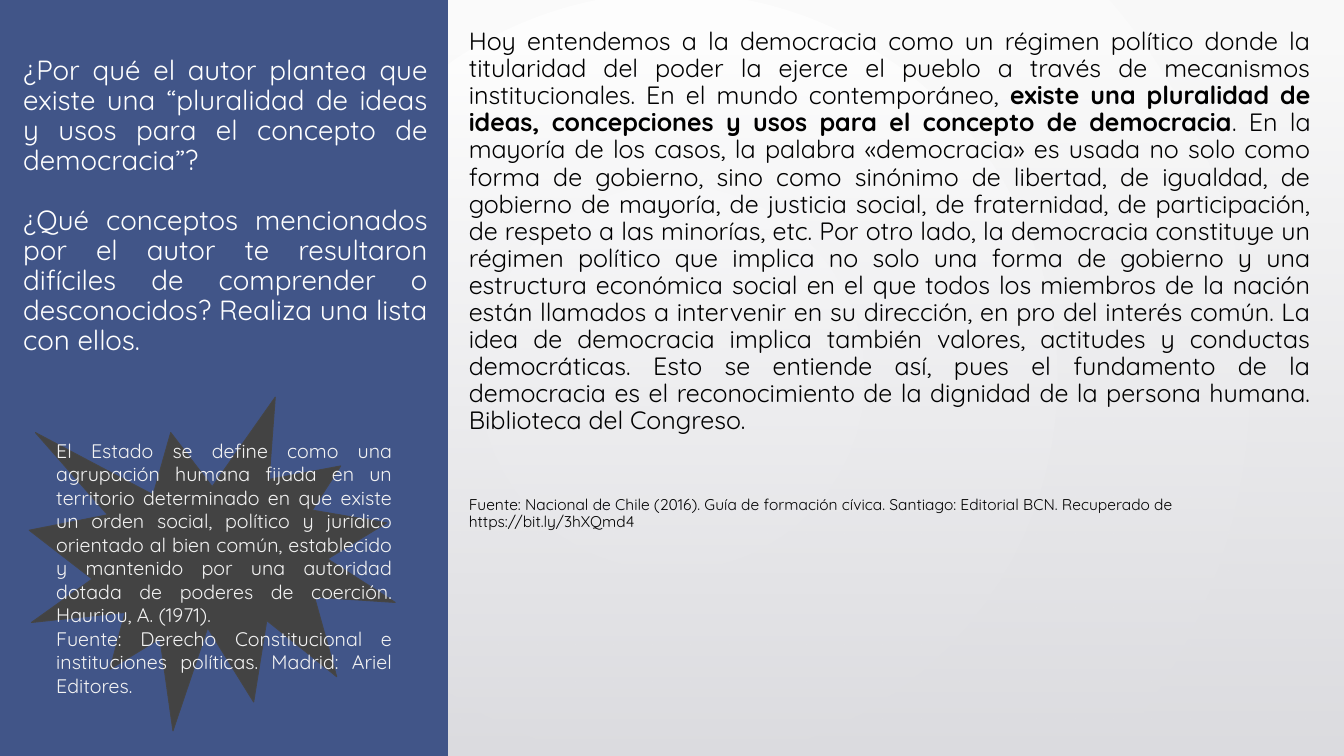
from pptx import Presentation
from pptx.dml.color import RGBColor
from pptx.enum.shapes import MSO_SHAPE
from pptx.enum.text import MSO_ANCHOR, MSO_AUTO_SIZE, PP_ALIGN
from pptx.oxml import parse_xml
from pptx.oxml.ns import nsdecls, qn
from pptx.util import Inches, Pt

RECT, SEAL = MSO_SHAPE.RECTANGLE, MSO_SHAPE.EXPLOSION1
LEFT, JUST = PP_ALIGN.LEFT, PP_ALIGN.JUSTIFY
TOP = MSO_ANCHOR.TOP
FIXED, GROW = MSO_AUTO_SIZE.NONE, MSO_AUTO_SIZE.SHAPE_TO_FIT_TEXT

FONT = "Quicksand"
BLUE = RGBColor(0x41, 0x55, 0x88)
GRAY = RGBColor(0x43, 0x43, 0x43)
EDGE = RGBColor(0x45, 0x45, 0x45)
WHITE = RGBColor(0xFF, 0xFF, 0xFF)
PALE = RGBColor(0xF3, 0xF3, 0xF3)
BLACK = RGBColor(0, 0, 0)
GLOW = (RGBColor(0xFF, 0xFF, 0xFF), RGBColor(0xF8, 0xF8, 0xF8))
FADE = (RGBColor(0xDC, 0xDC, 0xE0), RGBColor(0xDD, 0xDD, 0xE1))

# Each paragraph: size, alignment, space before, runs of (text, bold)
ASK = [
    (19.8, JUST, 0, [("¿Por qué el autor plantea que existe una “pluralidad de "
                      "ideas y usos para el concepto de democracia”?", False)]),
    (19.8, JUST, 21.4, [("¿Qué conceptos mencionados por el autor te resultaron "
                         "difíciles de comprender o desconocidos? Realiza una "
                         "lista con ellos.", False)]),
]
READ = [
    (17.9, JUST, 0, [
        ("Hoy entendemos a la democracia como un régimen político donde la "
         "titularidad del poder la ejerce el pueblo a través de mecanismos "
         "institucionales. En el mundo contemporáneo, ", False),
        ("existe una pluralidad de ideas, concepciones y usos para el concepto "
         "de democracia", True),
        (". En la mayoría de los casos, la palabra «democracia» es usada no solo "
         "como forma de gobierno, sino como sinónimo de libertad, de igualdad, "
         "de gobierno de mayoría, de justicia social, de fraternidad, de "
         "participación, de respeto a las minorías, etc. Por otro lado, la "
         "democracia constituye un régimen político que implica no solo una "
         "forma de gobierno y una estructura económica social en el que todos "
         "los miembros de la nación están llamados a intervenir en su dirección, "
         "en pro del interés común. La idea de democracia implica también "
         "valores, actitudes y conductas democráticas. Esto se entiende así, "
         "pues el fundamento de la democracia es el reconocimiento de la "
         "dignidad de la persona humana. Biblioteca del Congreso.", False)]),
    (11.1, LEFT, 44.5, [("Fuente: Nacional de Chile (2016). Guía de formación "
                         "cívica. Santiago: Editorial BCN. Recuperado de "
                         "https://bit.ly/3hXQmd4", False)]),
]
STATE = [
    (14, JUST, 0, [("El Estado se define como una agrupación humana fijada en un "
                    "territorio determinado en que existe un orden social, "
                    "político y jurídico orientado al bien común, establecido y "
                    "mantenido por una autoridad dotada de poderes de coerción. "
                    "Hauriou, A. (1971).", False)]),
    (14, JUST, 0, [("Fuente: Derecho Constitucional e instituciones políticas. "
                    "Madrid: Ariel Editores.", False)]),
]

WIDE, HIGH = 13.33, 7.5
SIDE = WIDE / 3
HEAD = 0.51


def box(*sides):
    return [Inches(side) for side in sides]


def blend(fill, root, pair, way, clear=False):
    """Give a fill two colour stops; clear makes the first one transparent."""
    fill.gradient()
    old = root.find(".//" + qn("a:gradFill"))
    alpha = '<a:alpha val="0"/>' if clear else ""
    new = parse_xml(
        f'<a:gradFill {nsdecls("a")} rotWithShape="1"><a:gsLst>'
        f'<a:gs pos="0"><a:srgbClr val="{pair[0]}">{alpha}</a:srgbClr></a:gs>'
        f'<a:gs pos="100000"><a:srgbClr val="{pair[1]}"/></a:gs>'
        f'</a:gsLst>{way}</a:gradFill>')
    old.getparent().replace(old, new)


def add_form(slide, kind, *place):
    form = slide.shapes.add_shape(kind, *box(*place))
    form.shadow.inherit = False
    form.line.fill.background()
    return form


def write(shape, paras, color, lead, fit, pad):
    frame = shape.text_frame
    frame.word_wrap = True
    frame.auto_size = fit
    frame.vertical_anchor = TOP
    frame.margin_left = frame.margin_right = Inches(0.1)
    frame.margin_top = frame.margin_bottom = Inches(pad)
    for i, (size, align, gap, runs) in enumerate(paras):
        para = frame.add_paragraph() if i else frame.paragraphs[0]
        props = para._p.get_or_add_pPr()
        props.set("marL", "0")
        props.set("indent", "0")
        props.append(parse_xml(f'<a:buNone {nsdecls("a")}/>'))
        para.alignment, para.line_spacing = align, lead
        para.space_before, para.space_after = Pt(gap), Pt(0)
        for text, bold in runs:
            run = para.add_run()
            run.text = text
            run.font.name, run.font.size = FONT, Pt(size)
            run.font.bold = bold
            run.font.color.rgb = color


def settle(slide, holder, *place):
    """Place a placeholder in front of the shapes made so far."""
    holder.left, holder.top, holder.width, holder.height = box(*place)
    slide.shapes.element.append(holder.element)


def main():
    deck = Presentation()
    deck.slide_width, deck.slide_height = box(WIDE, HIGH)
    slide = deck.slides.add_slide(deck.slide_layouts[1])
    title, body = slide.placeholders

    round_way = ('<a:path path="circle"><a:fillToRect l="50000" t="50000" '
                 'r="50000" b="50000"/></a:path>')
    down_way = '<a:lin ang="5400000" scaled="0"/>'
    blend(slide.background.fill, slide.element, GLOW, round_way)
    glow = add_form(slide, RECT, 0, 0, WIDE, HIGH)
    blend(glow.fill, glow.element, GLOW, round_way)
    fade = add_form(slide, RECT, 0, HEAD, WIDE, HIGH - HEAD)
    blend(fade.fill, fade.element, FADE, down_way, clear=True)

    panel = add_form(slide, RECT, 0, 0, SIDE, HIGH)
    panel.fill.solid()
    panel.fill.fore_color.rgb = BLUE

    settle(slide, title, 0.13, HEAD, 4.21, 3.49)
    write(title, ASK, WHITE, 0.9, FIXED, 0.05)
    settle(slide, body, 4.55, 0.24, 8.55, 5.34)
    write(body, READ, BLACK, 0.9, FIXED, 0.05)

    seal = add_form(slide, SEAL, 0.29, 3.94, 3.63, 3.31)
    seal.fill.solid()
    seal.fill.fore_color.rgb = GRAY
    seal.line.color.rgb = EDGE
    seal.line.width = Pt(0.75)
    note = slide.shapes.add_textbox(*box(0.46, 4.25, 3.53, 2.79))
    write(note, STATE, PALE, 1.0, GROW, 0.1)

    deck.save("out.pptx")


if __name__ == "__main__":
    main()
